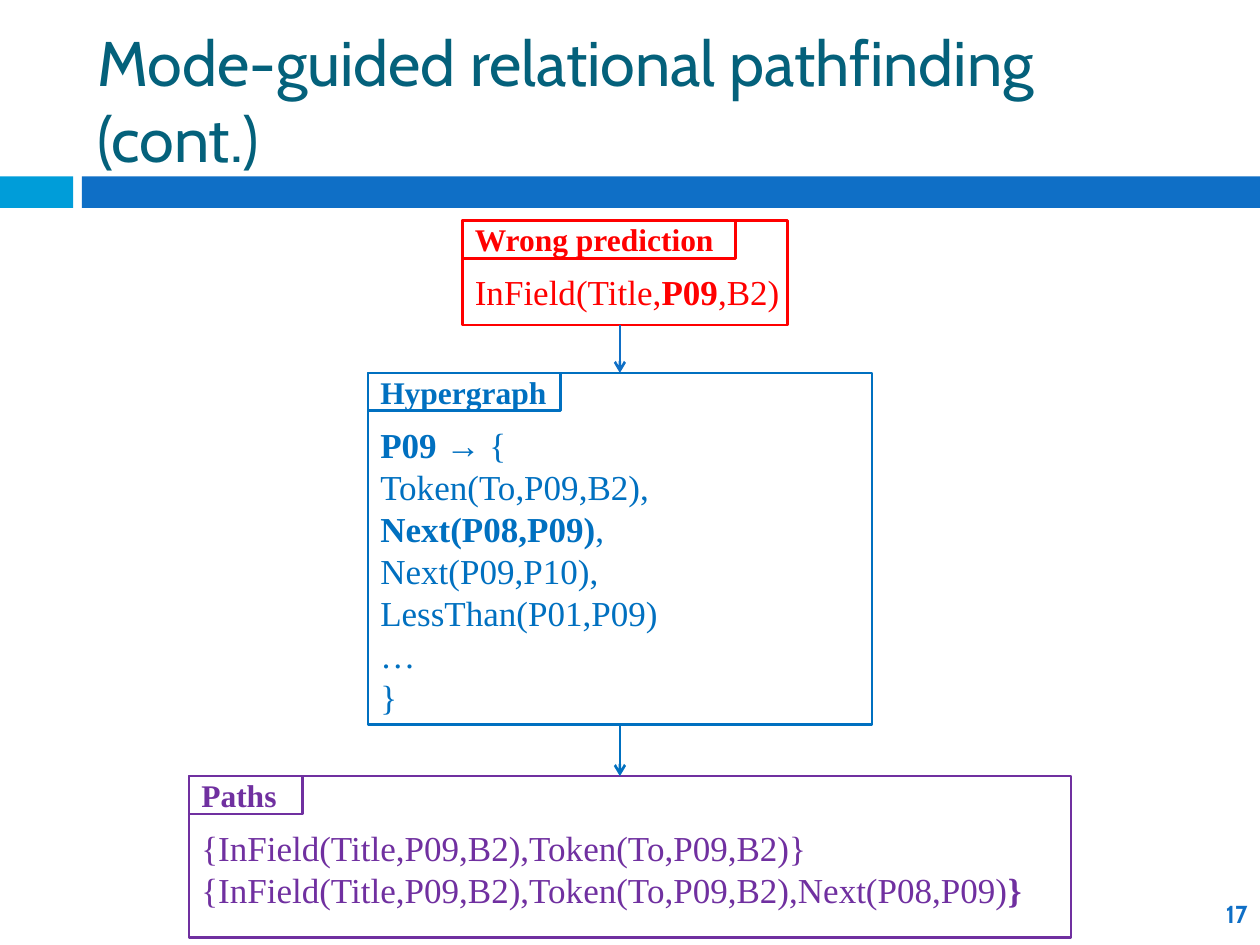
import pptx
import pptx.dml.color
import pptx.enum.shapes
import pptx.enum.text
import pptx.oxml
import pptx.oxml.ns
import pptx.util

Inches = pptx.util.Inches
Pt = pptx.util.Pt
ANCHOR = pptx.enum.text.MSO_ANCHOR
ALIGN = pptx.enum.text.PP_ALIGN
SERIF = "Times New Roman"
SANS = "Cabin"
RED, BLUE, PURPLE = "FF0000", "0070C0", "7030A0"
CYAN, DEEP_BLUE, TEAL = "009DD9", "0F6FC6", "04617B"


def color(value):
    """Turn a hex string into a colour."""
    return pptx.dml.color.RGBColor.from_string(value)


def add_run(paragraph, text, font, size, hex_color, bold=False):
    """Append one formatted run to a paragraph."""
    run = paragraph.add_run()
    run.text = text
    run.font.name = font
    run.font.size = Pt(size)
    run.font.bold = bold
    run.font.color.rgb = color(hex_color)


def add_rectangle(slide, box, fill=None, line=None):
    """Add a plain rectangle with an optional fill and outline."""
    shape = slide.shapes.add_shape(
        pptx.enum.shapes.MSO_SHAPE.RECTANGLE, *map(Inches, box))
    shape.shadow.inherit = False
    if fill:
        shape.fill.solid()
        shape.fill.fore_color.rgb = color(fill)
    else:
        shape.fill.background()
    if line:
        shape.line.color.rgb = color(line)
        shape.line.width = Pt(1.5)
    else:
        shape.line.fill.background()
    return shape


def set_frame(shape, top, right, bottom, anchor=ANCHOR.TOP):
    """Set wrapping, margins and anchor of a shape's text frame."""
    frame = shape.text_frame
    frame.word_wrap = True
    frame.auto_size = pptx.enum.text.MSO_AUTO_SIZE.NONE
    frame.vertical_anchor = anchor
    frame.margin_left = Inches(0.1)
    frame.margin_top = Inches(top)
    frame.margin_right = Inches(right)
    frame.margin_bottom = Inches(bottom)
    return frame


def add_header(slide, box, title):
    """Place the title and the two-part bar under it."""
    left, top, width, height = box
    placeholder = slide.shapes.title
    placeholder.left, placeholder.top = Inches(left + 0.67), Inches(top + 0.25)
    placeholder.width, placeholder.height = Inches(8.92), Inches(1.08)
    frame = set_frame(placeholder, 0.05, 0.1, 0.05, ANCHOR.MIDDLE)
    frame.paragraphs[0].alignment = ALIGN.LEFT
    add_run(frame.paragraphs[0], title, SANS, 36, TEAL)
    bar_top, bar_height = top + height - 0.25, 0.25
    add_rectangle(slide, (left, bar_top, 0.58, bar_height), CYAN)
    add_rectangle(slide, (left + 0.65, bar_top, width - 0.65, bar_height), DEEP_BLUE)


def add_panel(slide, box, label, label_width, lines, hex_color):
    """Draw an outlined panel with a label tab and lines of (text, bold) runs."""
    left, top = box[:2]
    panel = add_rectangle(slide, box, line=hex_color)
    frame = set_frame(panel, 0.4, 0, 0)
    for index, runs in enumerate(lines):
        paragraph = frame.add_paragraph() if index else frame.paragraphs[0]
        paragraph.alignment = ALIGN.LEFT
        paragraph.line_spacing = Pt(24)
        for text, bold in runs:
            add_run(paragraph, text, SERIF, 20, hex_color, bold)
    tab = add_rectangle(slide, (left, top, label_width, 0.3), line=hex_color)
    paragraph = set_frame(tab, 0, 0, 0).paragraphs[0]
    paragraph.alignment = ALIGN.LEFT
    add_run(paragraph, label, SERIF, 18, hex_color, True)
    return panel


def add_arrow(slide, x, top, bottom, hex_color):
    """Draw a downward arrow."""
    connector = slide.shapes.add_connector(
        pptx.enum.shapes.MSO_CONNECTOR.STRAIGHT,
        Inches(x), Inches(top), Inches(x), Inches(bottom))
    connector.line.color.rgb = color(hex_color)
    connector.line.width = Pt(1.5)
    line = connector.line._get_or_add_ln()
    line.append(pptx.oxml.parse_xml(
        f'<a:tailEnd {pptx.oxml.ns.nsdecls("a")} type="arrow"/>'))
    connector._element.spPr.append(pptx.oxml.parse_xml(
        f'<a:effectLst {pptx.oxml.ns.nsdecls("a")}/>'))
    return connector


def add_flow(slide, box):
    """Place the three panels and the arrows between them."""
    left, top, width, height = box
    add_panel(
        slide, (left + 2.17, top, 2.58, 0.83), "Wrong prediction", 2.17,
        [[("InField(Title,", False), ("P09", True), (",B2)", False)]], RED)
    hypergraph = add_panel(
        slide, (left + 1.42, top + 1.21, 4, 2.79), "Hypergraph", 1.53,
        [[("P09 ", True), ("→ {", False)],
         [("Token(To,P09,B2),", False)],
         [("Next(P08,P09)", True), (",", False)],
         [("Next(P09,P10),", False)],
         [("LessThan(P01,P09)", False)],
         [("…", False)],
         [("}", False)]], BLUE)
    add_panel(
        slide, (left, top + height - 1.28, width, 1.28), "Paths", 0.9,
        [[("{InField(Title,P09,B2),Token(To,P09,B2)}", False)],
         [("{InField(Title,P09,B2),Token(To,P09,B2),Next(P08,P09)", False),
          ("}", True)]], PURPLE)
    center = left + 3.42
    incoming = add_arrow(slide, center, top + 0.83, top + 1.21, DEEP_BLUE)
    incoming.end_connect(hypergraph, 0)
    outgoing = add_arrow(slide, center, top + 4, top + height - 1.28, BLUE)
    outgoing.begin_connect(hypergraph, 2)


def add_page_number(slide, box, number):
    """Place the page number in the corner."""
    shape = slide.shapes.add_textbox(*map(Inches, box))
    paragraph = set_frame(shape, 0.05, 0.1, 0.05, ANCHOR.MIDDLE).paragraphs[0]
    paragraph.alignment = ALIGN.RIGHT
    add_run(paragraph, number, SANS, 14, DEEP_BLUE, True)


def main():
    """Build the slide and save it."""
    presentation = pptx.Presentation()
    presentation.slide_width = Inches(10)
    presentation.slide_height = Inches(7.5)
    slide = presentation.slides.add_slide(presentation.slide_layouts[5])
    add_header(slide, (0, 0, 10, 1.65), "Mode-guided relational pathfinding (cont.)")
    add_flow(slide, (1.5, 1.75, 7, 5.69))
    add_page_number(slide, (9.5, 7, 0.5, 0.5), "17")
    presentation.save("out.pptx")


if __name__ == "__main__":
    main()
